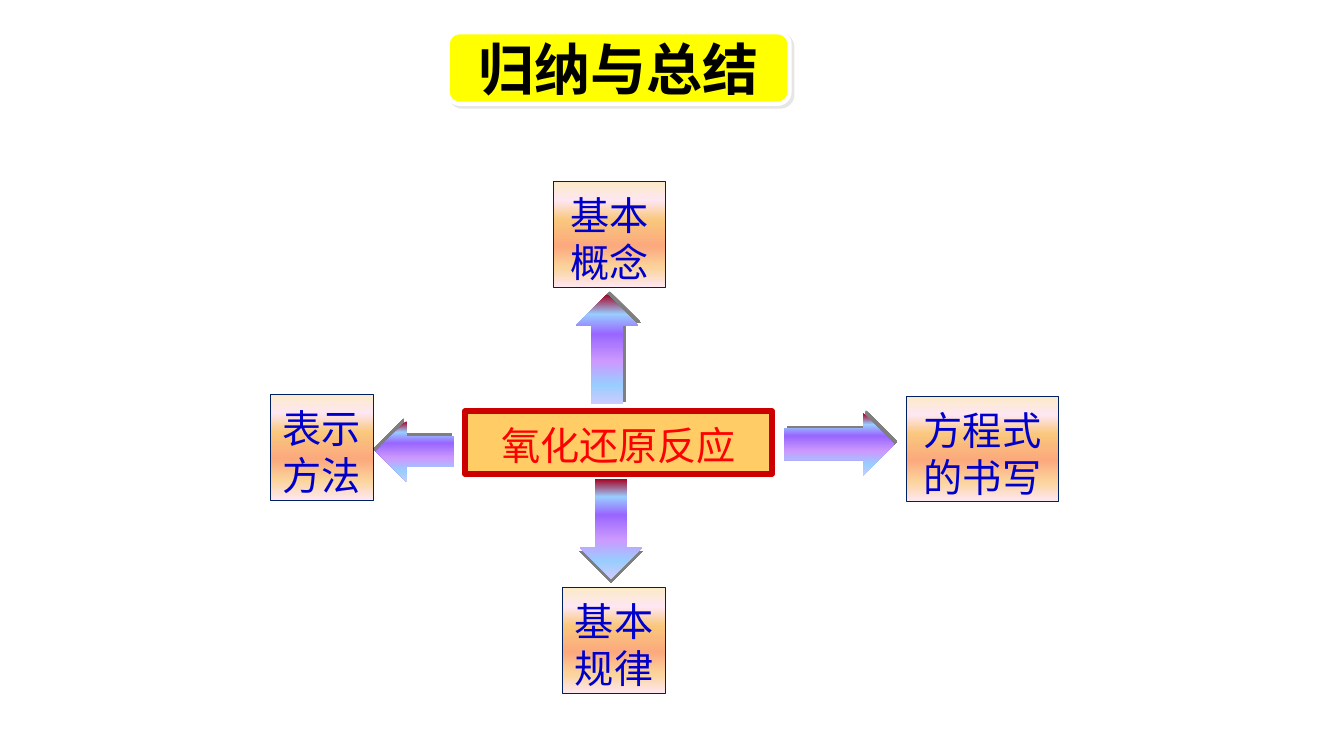
import pptx
import pptx.dml.color
import pptx.enum.shapes
import pptx.enum.text
import pptx.oxml.ns
import pptx.util
from lxml import etree

Inches = pptx.util.Inches
Pt = pptx.util.Pt
SHAPE = pptx.enum.shapes.MSO_SHAPE
ANCHOR = pptx.enum.text.MSO_ANCHOR
qn = pptx.oxml.ns.qn

FONT = "Noto Sans CJK SC"
STOPS = (0, 18, 36, 61, 82, 100)
TOPIC_COLOURS = ("FBEAC7", "FEE7F2", "FAC77D", "FBA97D", "FBD49C", "FEE7F2")
ARROW_COLOURS = ("A50021", "99CCFF", "9966FF", "CC99FF", "99CCFF", "CCCCFF")

LABEL_FRAME = {
    "word_wrap": True,
    "vertical_anchor": ANCHOR.TOP,
    "margin_top": Inches(0.1),
    "margin_bottom": Inches(0),
}
LABEL_PARAGRAPH = {"line_spacing": Pt(33.5)}
LABEL_FONT = {"size": Pt(28), "bold": False}
TITLE_FRAME = {"word_wrap": False, "vertical_anchor": ANCHOR.MIDDLE}
TITLE_FONT = {"size": Pt(40), "bold": True}

TOPICS = (
    ("基本概念", (5.49, 1.8, 1.11, 1.05)),
    ("基本规律", (5.58, 5.83, 1.02, 1.05)),
    ("表示方法", (2.68, 3.91, 1.02, 1.05)),
    ("方程式的书写", (8.99, 3.93, 1.51, 1.04)),
)
ARROWS = (
    (SHAPE.LEFT_ARROW, (3.73, 4.18, 0.78, 0.6), 225),
    (SHAPE.UP_ARROW, (5.71, 2.92, 0.62, 1.09), 315),
    (SHAPE.DOWN_ARROW, (5.75, 4.75, 0.62, 0.99), 90),
    (SHAPE.RIGHT_ARROW, (7.78, 4.1, 1.09, 0.62), 315),
)


def colour(value):
    return pptx.dml.color.RGBColor.from_string(value)


def apply(target, formats):
    for attribute, value in formats.items():
        setattr(target, attribute, value)


def add_colour_node(parent, value):
    return etree.SubElement(parent, qn("a:srgbClr"), val=value)


def fill_gradient(shape, colours):
    shape.fill.gradient()
    shape.fill.gradient_angle = 270
    stop_list = shape.element.spPr.find(".//" + qn("a:gsLst"))
    for stop in list(stop_list):
        stop_list.remove(stop)
    for position, value in zip(STOPS, colours):
        stop = etree.SubElement(stop_list, qn("a:gs"), pos=str(position * 1000))
        add_colour_node(stop, value)


def add_shadow(shape, value, opacity, angle):
    effects = shape.element.spPr.find(qn("a:effectLst"))
    shadow = etree.SubElement(
        effects, qn("a:outerShdw"), blurRad="0", dist=str(Pt(2.8)),
        dir=str(angle * 60000), algn="ctr", rotWithShape="0")
    node = add_colour_node(shadow, value)
    etree.SubElement(node, qn("a:alpha"), val=str(opacity * 1000))


def add_figure(slide, kind, box, fill, line=None):
    figure = slide.shapes.add_shape(kind, *map(Inches, box))
    if isinstance(fill, str):
        figure.fill.solid()
        figure.fill.fore_color.rgb = colour(fill)
    else:
        fill_gradient(figure, fill)
    if line:
        figure.line.color.rgb = colour(line[0])
        figure.line.width = Pt(line[1])
    else:
        figure.line.fill.background()
    figure.shadow.inherit = False
    return figure


def write(figure, words, text_colour, frame_format, paragraph_format, font_format):
    frame = figure.text_frame
    apply(frame, frame_format)
    paragraph = frame.paragraphs[0]
    paragraph.alignment = pptx.enum.text.PP_ALIGN.CENTER
    apply(paragraph, paragraph_format)
    run = paragraph.add_run()
    run.text = words
    apply(run.font, {"name": FONT, **font_format})
    run.font.color.rgb = colour(text_colour)
    etree.SubElement(run.font._element, qn("a:ea"), typeface=FONT)


def add_label(slide, words, box, fill, line, text_colour):
    label = add_figure(slide, SHAPE.RECTANGLE, box, fill, line)
    write(label, words, text_colour, LABEL_FRAME, LABEL_PARAGRAPH, LABEL_FONT)


def add_arrow(slide, kind, box, shadow_angle):
    arrow = add_figure(slide, kind, box, ARROW_COLOURS)
    add_shadow(arrow, "000000", 50, shadow_angle)


def add_title(slide, words, box):
    title = add_figure(slide, SHAPE.ROUNDED_RECTANGLE, box, "FFFF00", ("FFFFFF", 3))
    add_shadow(title, "E7E6E6", 100, 45)
    write(title, words, "000000", TITLE_FRAME, {}, TITLE_FONT)


def main():
    presentation = pptx.Presentation()
    apply(presentation, {"slide_width": Inches(13.33), "slide_height": Inches(7.5)})
    slide = presentation.slides.add_slide(presentation.slide_layouts[6])
    add_label(slide, "氧化还原反应", (4.61, 4.08, 3.05, 0.62),
              "FFCC66", ("CC0000", 4), "FF0000")
    for words, box in TOPICS:
        add_label(slide, words, box, TOPIC_COLOURS, ("002060", 0.25), "0000CC")
    for kind, box, shadow_angle in ARROWS:
        add_arrow(slide, kind, box, shadow_angle)
    add_title(slide, "归纳与总结", (4.44, 0.32, 3.39, 0.71))
    presentation.save("out.pptx")


if __name__ == "__main__":
    main()
